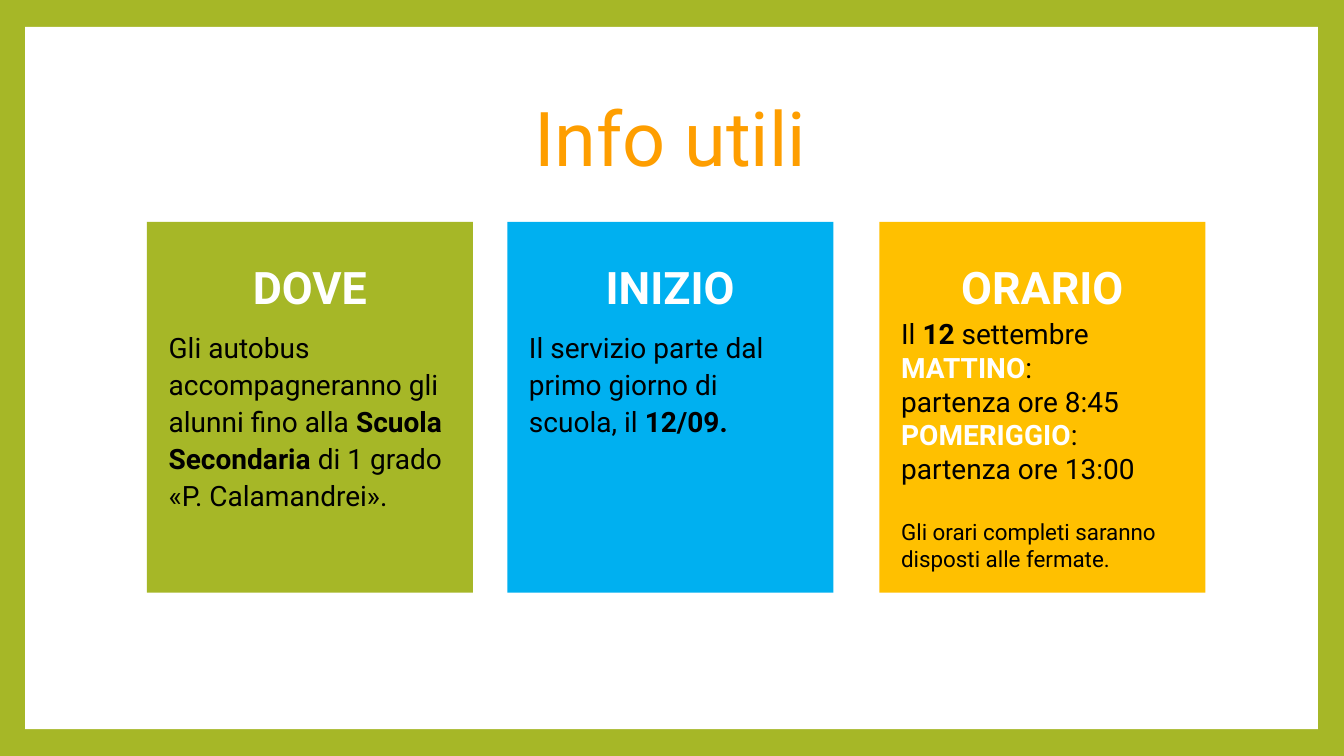
import pptx
import pptx.dml.color
import pptx.enum.shapes
import pptx.enum.text
import pptx.util

COLUMNS, ROWS = 160, 90
CELL = pptx.util.Inches(1) / 12
COLORS = {"green": "A6B727", "blue": "00B0F0", "yellow": "FFC000",
          "orange": "FE9E00", "white": "FFFFFF", "black": "000000"}
ALIGN = pptx.enum.text.PP_ALIGN
HEADING = {"size": 32, "color": "white", "bold": True}
BODY = {"size": 20, "color": "black", "bold": False}
STRONG = {**BODY, "bold": True}
LABEL = {**STRONG, "color": "white"}
SMALL = {**BODY, "size": 16}


def rgb(name):
    return pptx.dml.color.RGBColor.from_string(COLORS[name])


def box(left, top, width, height):
    """Turn grid columns and rows into slide lengths."""
    return [pptx.util.Emu(round(cells * CELL)) for cells in (left, top, width, height)]


class InfoSlide:
    font_name = "Roboto"

    def __init__(self, presentation, background):
        self.slide = presentation.slides.add_slide(presentation.slide_layouts[5])
        fill = self.slide.background.fill
        fill.solid()
        fill.fore_color.rgb = rgb(background)

    def rectangle(self, shapes, area, color):
        shape = shapes.add_shape(pptx.enum.shapes.MSO_SHAPE.RECTANGLE, *box(*area))
        shape.shadow.inherit = False
        shape.fill.solid()
        shape.fill.fore_color.rgb = rgb(color)
        shape.line.fill.background()
        return shape

    def fill_text(self, shape, paragraphs):
        """Each paragraph is a dict of formats and a list of (text, style) runs."""
        frame = shape.text_frame
        frame.word_wrap = True
        frame.auto_size = pptx.enum.text.MSO_AUTO_SIZE.NONE
        frame.vertical_anchor = pptx.enum.text.MSO_ANCHOR.MIDDLE
        for index, (formats, runs) in enumerate(paragraphs):
            paragraph = frame.add_paragraph() if index else frame.paragraphs[0]
            for name, value in formats.items():
                setattr(paragraph, name, value)
            for text, style in runs:
                run = paragraph.add_run()
                run.text = text
                run.font.color.rgb = rgb(style["color"])
                values = {"name": self.font_name, "bold": style["bold"],
                          "size": pptx.util.Pt(style["size"])}
                for name, value in values.items():
                    setattr(run.font, name, value)

    def title(self, text, area):
        shape = self.slide.shapes.title
        for name, value in zip(("left", "top", "width", "height"), box(*area)):
            setattr(shape, name, value)
        style = {"size": 54, "color": "orange", "bold": False}
        formats = {"alignment": ALIGN.CENTER, "line_spacing": 0.9}
        self.fill_text(shape, [(formats, [(text, style)])])

    def panel(self, area, color):
        """Put the panel behind the title."""
        shape = self.rectangle(self.slide.shapes, area, color)
        self.slide.shapes.title.element.addprevious(shape.element)

    def card(self, left, color, text_top, text_height, heading, paragraphs):
        shapes = self.slide.shapes.add_group_shape().shapes
        self.rectangle(shapes, (left, 26.4, 38.8, 44.16), color)
        text_box = shapes.add_textbox(*box(left + 1.4, text_top, 36, text_height))
        heading_formats = {**SPACED, "alignment": ALIGN.CENTER}
        self.fill_text(text_box, [(heading_formats, [(heading, HEADING)]), *paragraphs])


LOOSE = {"alignment": ALIGN.LEFT, "line_spacing": 1.1}
SPACED = {**LOOSE, "space_before": pptx.util.Pt(10)}
PLAIN = {"alignment": ALIGN.LEFT}
AFTER_GAP = {**PLAIN, "space_before": pptx.util.Pt(24)}

# Left column, colour, text top and height, heading, paragraphs
CARDS = [
    (17.5, "green", 28.2, 34.8, "DOVE", [
        (SPACED, [("Gli autobus accompagneranno gli alunni fino alla ", BODY),
                  ("Scuola Secondaria ", STRONG),
                  ("di 1 grado «P. Calamandrei».", BODY)])]),
    (60.4, "blue", 21.4, 39.6, "INIZIO", [
        (SPACED, [("Il servizio parte dal primo giorno di scuola, il ", BODY),
                  ("12/09.", STRONG)])]),
    (104.7, "yellow", 28.2, 42, "ORARIO", [
        (LOOSE, [("Il ", BODY), ("12", STRONG), (" settembre", BODY)]),
        (PLAIN, [("MATTINO", LABEL), (":", BODY)]),
        (PLAIN, [("partenza ore 8:45", BODY)]),
        (PLAIN, [("POMERIGGIO", LABEL), (": partenza ore 13:00", BODY)]),
        (AFTER_GAP, [("Gli orari completi saranno disposti alle fermate.", SMALL)])]),
]


def main():
    presentation = pptx.Presentation()
    presentation.slide_width, presentation.slide_height = box(0, 0, COLUMNS, ROWS)[2:]
    info = InfoSlide(presentation, "green")

    # White panel inside the green border
    info.panel((3, 3.2, 153.9, 83.6), "white")
    info.title("Info utili", (15, 8, 129.6, 17.8))

    # Three information cards
    for card in CARDS:
        info.card(*card)

    presentation.save("out.pptx")


if __name__ == "__main__":
    main()
